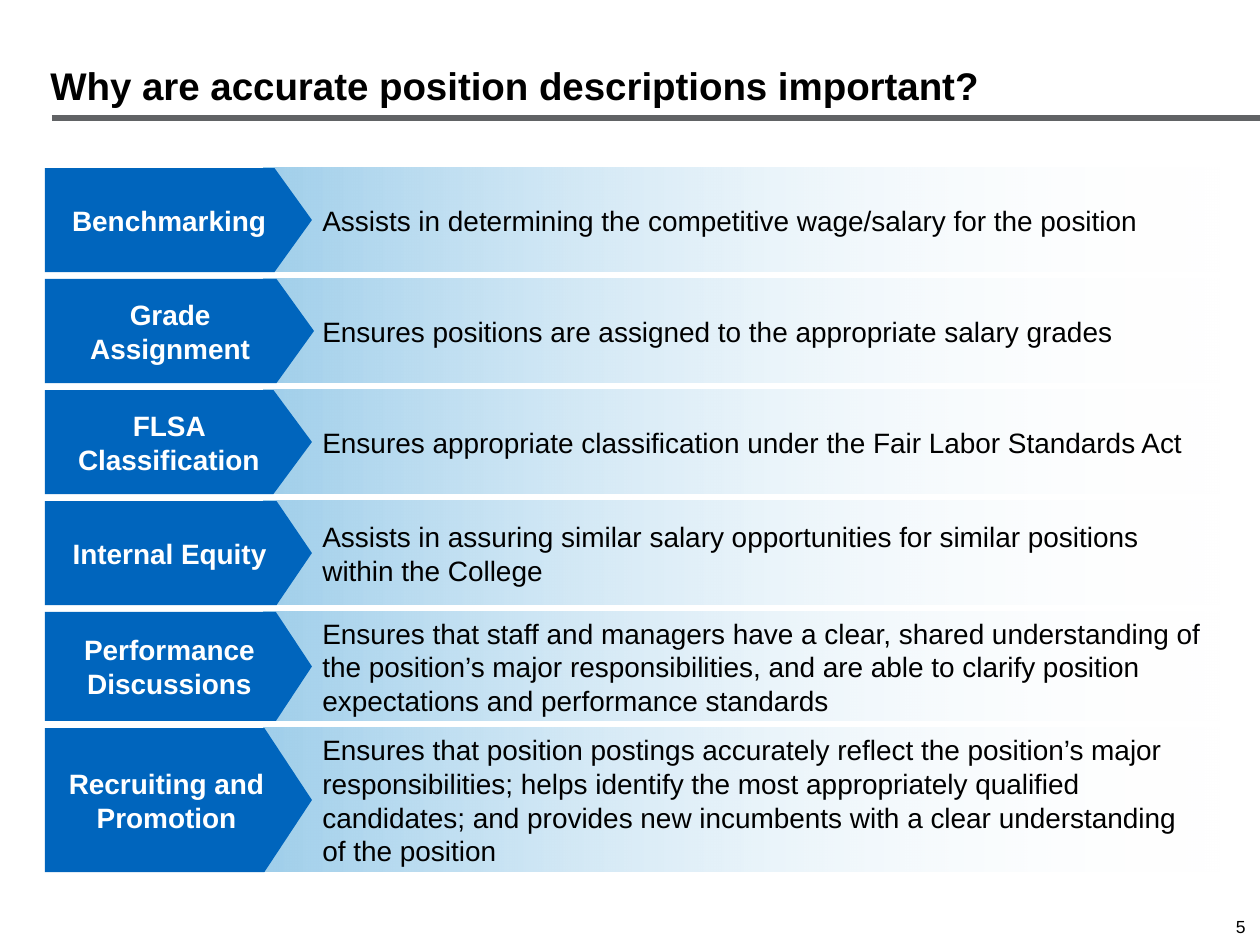
from lxml.etree import SubElement
from pptx import Presentation
from pptx.dml.color import RGBColor
from pptx.enum.shapes import MSO_CONNECTOR, MSO_SHAPE
from pptx.enum.text import MSO_ANCHOR as Anchor, PP_ALIGN as Align
from pptx.oxml.ns import qn
from pptx.util import Pt

# Content
TITLE = "Why are accurate position descriptions important?"
PAGE_NUMBER = "5"
# label, description, row height, label width, arrow point ratio
ROWS = [
    ("Benchmarking",
     "Assists in determining the competitive wage/salary for the position",
     104, 267, 0.36),
    ("Grade Assignment",
     "Ensures positions are assigned to the appropriate salary grades",
     104, 269, 0.36),
    ("FLSA Classification",
     "Ensures appropriate classification under the Fair Labor Standards Act",
     104, 267, 0.37),
    ("Internal Equity",
     "Assists in assuring similar salary opportunities for similar positions "
     "within the College",
     104, 267, 0.34),
    ("Performance Discussions",
     "Ensures that staff and managers have a clear, shared understanding of "
     "the position’s major responsibilities, and are able to clarify position "
     "expectations and performance standards",
     109, 267, 0.33),
    ("Recruiting and Promotion",
     "Ensures that position postings accurately reflect the position’s major "
     "responsibilities; helps identify the most appropriately qualified "
     "candidates; and provides new incumbents with a clear understanding\n"
     "of the position",
     144, 267, 0.33),
]

# Style and layout, in px
BLACK = RGBColor(0x00, 0x00, 0x00)
WHITE = RGBColor(0xFF, 0xFF, 0xFF)
GRAY = RGBColor(0x61, 0x63, 0x65)
BLUE = RGBColor(0x00, 0x65, 0xBD)
LIGHT_BLUE = RGBColor(0xA0, 0xCF, 0xEB)
FONT = "Arial"
SLIDE_WIDTH, SLIDE_HEIGHT = 1260, 945
RULE_LEFT, RULE_TOP = 52, 118
LABEL_LEFT, BAND_LEFT, BAND_WIDTH = 45, 263, 961
FIRST_TOP, ROW_GAP, BAND_INDENT = 168, 7, 47


def px(value):
    return value * 914400 // 126


def write(shape, text, size, color, bold=False, align=Align.LEFT,
          anchor=Anchor.MIDDLE):
    frame = shape.text_frame
    frame.word_wrap = True
    frame.vertical_anchor = anchor
    paragraph = frame.paragraphs[0]
    paragraph.alignment = align
    for index, line in enumerate(text.split("\n")):
        if index:
            paragraph.add_line_break()
        run = paragraph.add_run()
        run.text = line
        run.font.name = FONT
        run.font.size = Pt(size)
        run.font.bold = bold
        run.font.color.rgb = color
    return paragraph


def add_text(slide, box, *args, **options):
    shape = slide.shapes.add_textbox(*map(px, box))
    write(shape, *args, **options).line_spacing = 0.9


def add_block(slide, kind, left, top, width, height):
    shape = slide.shapes.add_shape(kind, *map(px, (left, top, width, height)))
    shape.shadow.inherit = False
    shape.line.fill.background()
    return shape


def fade_out(shape):
    shape.fill.gradient()
    shape.fill.gradient_angle = 0
    start, end = shape.fill.gradient_stops
    start.color.rgb, start.position = LIGHT_BLUE, 0
    end.color.rgb, end.position = WHITE, 1
    end_color = shape.element.xpath(".//a:gs[last()]/a:srgbClr")[0]
    SubElement(end_color, qn("a:alpha"), val="0")


def main():
    presentation = Presentation()
    presentation.slide_width = px(SLIDE_WIDTH)
    presentation.slide_height = px(SLIDE_HEIGHT)
    slide = presentation.slides.add_slide(presentation.slide_layouts[6])

    # Page number, rule and title
    add_text(slide, (1182, 912, 76, 32), PAGE_NUMBER, 10, BLACK,
             align=Align.RIGHT)
    rule = slide.shapes.add_connector(
        MSO_CONNECTOR.STRAIGHT,
        *map(px, (RULE_LEFT, RULE_TOP, SLIDE_WIDTH, RULE_TOP)))
    rule.line.color.rgb = GRAY
    rule.line.width = Pt(3)
    SubElement(rule.element.spPr, qn("a:effectLst"))
    add_text(slide, (38, 10, 1201, 105), TITLE, 22, BLACK, bold=True,
             anchor=Anchor.BOTTOM)

    # Rows: fading description band under an arrow label
    top = FIRST_TOP
    for label, description, height, label_width, point in ROWS:
        band = add_block(slide, MSO_SHAPE.RECTANGLE,
                         BAND_LEFT, top, BAND_WIDTH, height)
        fade_out(band)
        paragraph = write(band, description, 16, BLACK)
        properties = paragraph._p.get_or_add_pPr()
        properties.set("marL", str(px(BAND_INDENT)))
        properties.set("indent", "0")

        arrow = add_block(slide, MSO_SHAPE.PENTAGON,
                          LABEL_LEFT, top, label_width, height)
        arrow.adjustments[0] = point
        arrow.fill.solid()
        arrow.fill.fore_color.rgb = BLUE
        write(arrow, label, 16, WHITE, bold=True, align=Align.CENTER)
        top += height + ROW_GAP

    presentation.save("out.pptx")


if __name__ == "__main__":
    main()
